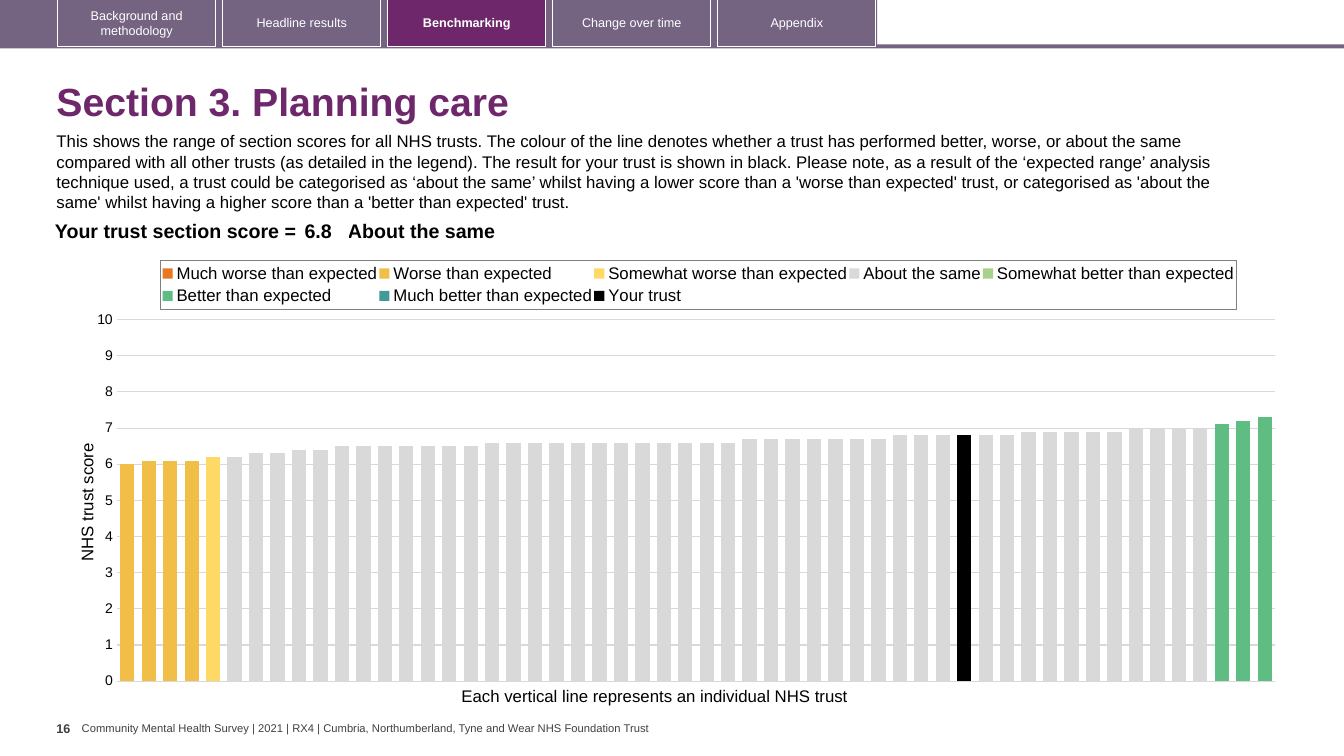
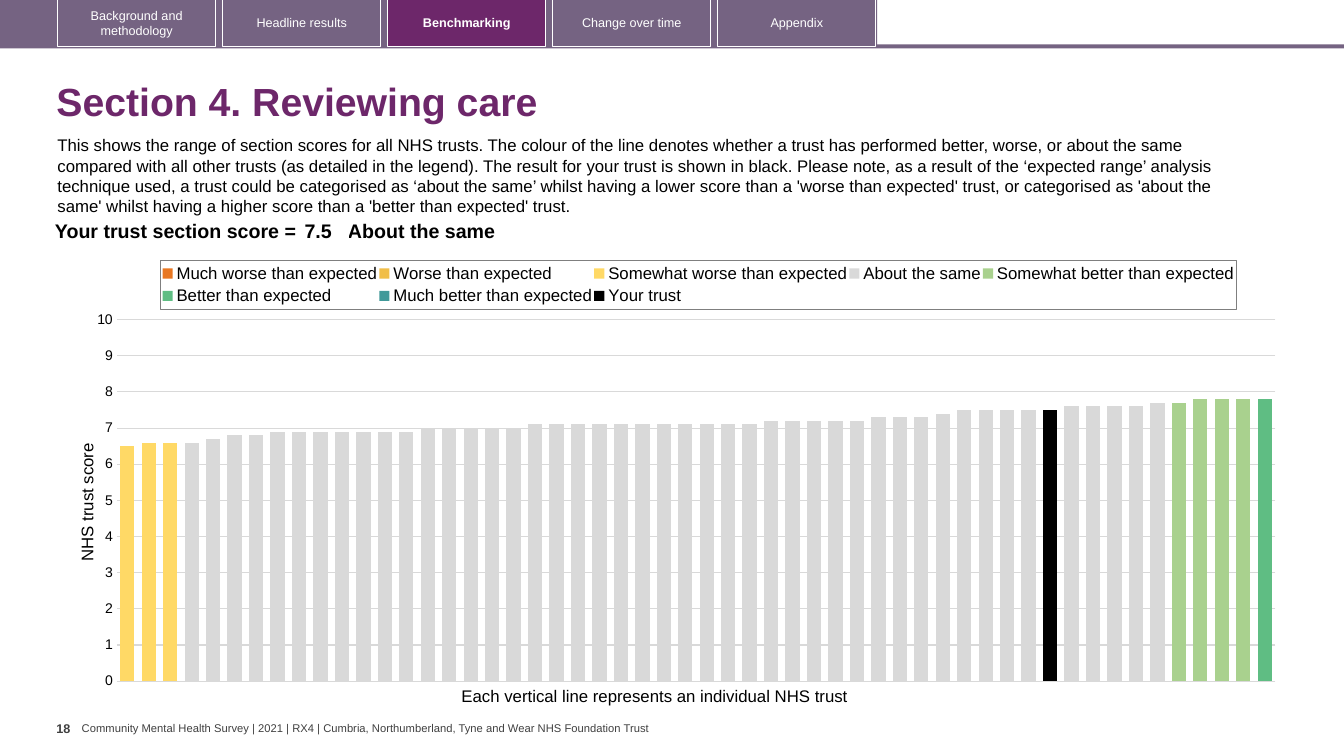
from copy import deepcopy
from dataclasses import dataclass

from lxml.etree import SubElement
from pptx import Presentation
from pptx.chart.axis import ValueAxis
from pptx.chart.chart import Chart
from pptx.chart.data import CategoryChartData
from pptx.chart.legend import Legend
from pptx.dml.color import RGBColor
from pptx.enum.chart import XL_CHART_TYPE, XL_LEGEND_POSITION, XL_TICK_LABEL_POSITION, XL_TICK_MARK
from pptx.enum.shapes import MSO_SHAPE
from pptx.enum.text import MSO_ANCHOR, MSO_AUTO_SIZE, PP_ALIGN
from pptx.oxml import parse_xml
from pptx.oxml.ns import nsdecls, qn
from pptx.shapes.autoshape import Shape
from pptx.slide import Slide, SlideLayout
from pptx.text.text import Font, TextFrame
from pptx.util import Emu, Inches, Pt

SLIDE_WIDTH, SLIDE_HEIGHT = Inches(13.33), Inches(7.5)
PURPLE, MAUVE, WHITE, BLACK = "6D276A", "756382", "FFFFFF", "000000"
DARK_GREY, BORDER_GREY, GRID_GREY = "404040", "7F7F7F", "D9D9D9"
FONT = "Arial"

TABS = ["Background and methodology", "Headline results", "Benchmarking",
        "Change over time", "Appendix"]
ACTIVE_TAB = "Benchmarking"
FOOTER = ("Community Mental Health Survey | 2021 | RX4 | "
          "Cumbria, Northumberland, Tyne and Wear NHS Foundation Trust")
INTRO = (
    "This shows the range of section scores for all NHS trusts. The colour of the line denotes "
    "whether a trust has performed better, worse, or about the same compared with all other trusts "
    "(as detailed in the legend). The result for your trust is shown in black. Please note, as a "
    "result of the ‘expected range’ analysis technique used, a trust could be categorised as "
    "‘about the same’ whilst having a lower score than a 'worse than expected' trust, or "
    "categorised as 'about the same' whilst having a higher score than a 'better than expected' "
    "trust."
)
BANDS = {
    "Much worse than expected": "E87722",
    "Worse than expected": "F1BE48",
    "Somewhat worse than expected": "FFD966",
    "About the same": "D9D9D9",
    "Somewhat better than expected": "A9D18E",
    "Better than expected": "5FBD83",
    "Much better than expected": "419999",
}
OWN_TRUST = "Your trust"
TRUST_COUNT = 54


@dataclass(frozen=True)
class Frame:
    """A box in percent of the slide's width and height."""
    left: float
    top: float
    width: float
    height: float

    def emu(self) -> tuple[Emu, Emu, Emu, Emu]:
        return (across(self.left), down(self.top), across(self.width), down(self.height))


@dataclass(frozen=True)
class Section:
    """Scores rise from band to band; each is given as (score, number of trusts)."""
    title: str
    number: int
    intro: Frame
    scores: dict[str, list[tuple[float, int]]]
    own_position: int
    own_score: float
    verdict: str = "About the same"


SECTIONS = [
    Section(
        "Section 3. Planning care", 16, Frame(3.45, 16.67, 91, 12.13),
        {
            "Worse than expected": [(6, 1), (6.1, 3)],
            "Somewhat worse than expected": [(6.2, 1)],
            "About the same": [(6.2, 1), (6.3, 2), (6.4, 2), (6.5, 7), (6.6, 12), (6.7, 7),
                               (6.8, 6), (6.9, 5), (7, 4)],
            "Better than expected": [(7.1, 1), (7.2, 1), (7.3, 1)],
        },
        own_position=39, own_score=6.8,
    ),
    Section(
        "Section 4. Reviewing care", 18, Frame(3.52, 17.2, 91, 12.13),
        {
            "Somewhat worse than expected": [(6.5, 1), (6.6, 2)],
            "About the same": [(6.6, 1), (6.7, 1), (6.8, 2), (6.9, 7), (7, 5), (7.1, 11),
                               (7.2, 5), (7.3, 3), (7.4, 1), (7.5, 5), (7.6, 4), (7.7, 1)],
            "Somewhat better than expected": [(7.7, 1), (7.8, 3)],
            "Better than expected": [(7.8, 1)],
        },
        own_position=43, own_score=7.5,
    ),
]


def across(percent: float) -> Emu:
    return Emu(round(SLIDE_WIDTH * percent / 100))


def down(percent: float) -> Emu:
    return Emu(round(SLIDE_HEIGHT * percent / 100))


def color(value: str) -> RGBColor:
    return RGBColor.from_string(value)


def style_font(font: Font, size: float, hue: str = BLACK, bold: bool = False) -> None:
    font.name, font.size, font.bold = FONT, Pt(size), bold
    font.color.rgb = color(hue)


def set_text(frame: TextFrame, text: str, size: float, hue: str = BLACK, bold: bool = False,
             align: PP_ALIGN = PP_ALIGN.LEFT) -> None:
    frame.text = text
    para = frame.paragraphs[0]
    para.alignment = align
    style_font(para.runs[0].font, size, hue, bold)


def add_label(page: Slide, frame: Frame, text: str, size: float, hue: str = BLACK,
              bold: bool = False, inset: float = 0) -> Shape:
    """Add a text box on one line, with a side inset in inches."""
    box = page.shapes.add_textbox(*frame.emu())
    box.text_frame.word_wrap = False
    box.text_frame.margin_left = box.text_frame.margin_right = Inches(inset)
    set_text(box.text_frame, text, size, hue, bold)
    return box


def add_block(page: Slide, frame: Frame, fill: str | None, line: str | None = None) -> Shape:
    block = page.shapes.add_shape(MSO_SHAPE.RECTANGLE, *frame.emu())
    block.shadow.inherit = False
    if fill:
        block.fill.solid()
        block.fill.fore_color.rgb = color(fill)
    else:
        block.fill.background()
    if line:
        block.line.color.rgb = color(line)
        block.line.width = Pt(0.75)
    else:
        block.line.fill.background()
    return block


def furnish_layout(layout: SlideLayout, page: Slide) -> None:
    """Draw the navigation and footer on a page, then move them to its layout."""
    footer = add_label(page, Frame(6.08, 95.47, 42.84, 1.73), FOOTER, 8, DARK_GREY)
    footer.text_frame.margin_top = footer.text_frame.margin_bottom = 0
    footer.text_frame.vertical_anchor = MSO_ANCHOR.MIDDLE
    furniture = [footer,
                 add_block(page, Frame(0, 5.87, 100, 0.53), MAUVE),
                 add_block(page, Frame(0, 0, 65.27, 6.27), MAUVE)]
    for column, name in enumerate(TABS):
        active = name == ACTIVE_TAB
        tab = add_block(page, Frame(4.28 + 12.28 * column, -0.13, 11.78, 6.27),
                        PURPLE if active else None, WHITE)
        tab.text_frame.vertical_anchor = MSO_ANCHOR.MIDDLE
        set_text(tab.text_frame, name, 9, WHITE, active, PP_ALIGN.CENTER)
        furniture.append(tab)
    for identifier, shape in enumerate(furniture, start=100):
        shape.element.xpath(".//p:cNvPr")[0].set("id", str(identifier))
        layout.shapes.element.append(shape.element)


def fill_placeholder(holder: Shape, frame: Frame, text: str, size: float, hue: str,
                     bold: bool, spacing: float, anchor: MSO_ANCHOR) -> None:
    holder.left, holder.top, holder.width, holder.height = frame.emu()
    holder.text_frame.auto_size = MSO_AUTO_SIZE.NONE
    holder.text_frame.vertical_anchor = anchor
    holder.text_frame.text = text
    para = holder.text_frame.paragraphs[0]
    para.alignment, para.line_spacing, para.space_before = PP_ALIGN.LEFT, spacing, Pt(0)
    properties = para._p.get_or_add_pPr()
    properties.set("marL", "0")
    properties.set("indent", "0")
    SubElement(properties, qn("a:buNone"))
    style_font(para.runs[0].font, size, hue, bold)


def build_chart_data(section: Section) -> CategoryChartData:
    data = CategoryChartData()
    data.categories = [str(number + 1) for number in range(TRUST_COUNT)]
    start = 0
    for band in BANDS:
        scores = [score for score, count in section.scores.get(band, []) for _ in range(count)]
        rest = TRUST_COUNT - start - len(scores)
        data.add_series(band, [None] * start + scores + [None] * rest)
        start += len(scores)
    own = [section.own_score if position == section.own_position else None
           for position in range(TRUST_COUNT)]
    data.add_series(OWN_TRUST, own)
    return data


def set_layout(parent, index: int, inner: bool = False, **shares: float) -> None:
    """Place a chart part by shares of the chart's size: x, y, w and h."""
    for old in parent.findall(qn("c:layout")):
        parent.remove(old)
    layout = parent.makeelement(qn("c:layout"))
    parent.insert(index, layout)
    manual = SubElement(layout, qn("c:manualLayout"))
    if inner:
        SubElement(manual, qn("c:layoutTarget")).set("val", "inner")
    for axis in "xy":
        SubElement(manual, qn(f"c:{axis}Mode")).set("val", "edge")
    for side, share in shares.items():
        SubElement(manual, qn(f"c:{side}")).set("val", str(share))


def move_last_series_to_second_axes(chart: Chart) -> None:
    plot_area = chart.element.find(f".//{qn('c:plotArea')}")
    bars = plot_area.find(qn("c:barChart"))
    own_bars = deepcopy(bars)
    bars.remove(bars.findall(qn("c:ser"))[-1])
    for series in own_bars.findall(qn("c:ser"))[:-1]:
        own_bars.remove(series)
    bars.addnext(own_bars)

    category, value = (plot_area.find(qn(name)) for name in ("c:catAx", "c:valAx"))
    own_category, own_value = deepcopy(category), deepcopy(value)
    value.addnext(own_value)
    own_value.addnext(own_category)
    for name in ("c:majorGridlines", "c:title"):
        own_value.remove(own_value.find(qn(name)))
    own_value.find(qn("c:axPos")).set("val", "r")
    own_value.find(qn("c:tickLblPos")).set("val", "none")
    own_value.find(qn("c:crosses")).set("val", "max")
    new_ids = {axis.find(qn("c:axId")).get("val"): identifier
               for axis, identifier in ((category, "5001"), (value, "5002"))}
    for part in (own_bars, own_category, own_value):
        for reference in part.findall(qn("c:axId")) + part.findall(qn("c:crossAx")):
            reference.set("val", new_ids[reference.get("val")])


def style_value_axis(axis: ValueAxis) -> None:
    axis.minimum_scale, axis.maximum_scale, axis.major_unit = 0, 10, 1
    axis.major_tick_mark = axis.minor_tick_mark = XL_TICK_MARK.NONE
    axis.tick_label_position = XL_TICK_LABEL_POSITION.NEXT_TO_AXIS
    axis.format.line.fill.background()
    axis.major_gridlines.format.line.color.rgb = color(GRID_GREY)
    axis.major_gridlines.format.line.width = Pt(0.75)
    style_font(axis.tick_labels.font, 10)
    title = axis.axis_title
    set_text(title.text_frame, "NHS trust score", 12, align=PP_ALIGN.CENTER)
    title.element.xpath(".//a:bodyPr")[0].set("rot", "-5400000")
    set_layout(title.element, 1, x=0.005, y=0.427)


def style_legend(legend: Legend) -> None:
    legend.position = XL_LEGEND_POSITION.TOP
    legend.include_in_layout = False
    style_font(legend.font, 12)
    element = legend.font and legend._element
    set_layout(element, 1, x=0.076, y=0.025, w=0.878, h=0.11)
    border = parse_xml(f'<c:spPr {nsdecls("c", "a")}><a:ln w="9525"><a:solidFill>'
                       f'<a:srgbClr val="{BORDER_GREY}"/></a:solidFill></a:ln></c:spPr>')
    element.find(qn("c:txPr")).addprevious(border)


def add_score_chart(page: Slide, section: Section) -> None:
    frame = Frame(5.03, 32.93, 91.15, 59.2)
    chart = page.shapes.add_chart(XL_CHART_TYPE.COLUMN_CLUSTERED, *frame.emu(),
                                  build_chart_data(section)).chart
    style_font(chart.font, 10)
    chart.has_title = False
    chart.has_legend = True
    style_legend(chart.legend)
    plot = chart.plots[0]
    plot.gap_width, plot.overlap, plot.vary_by_categories = 50, 100, False
    for series, hue in zip(plot.series, [*BANDS.values(), BLACK]):
        series.invert_if_negative = False
        series.format.fill.solid()
        series.format.fill.fore_color.rgb = color(hue)
    chart.category_axis.visible = False
    style_value_axis(chart.value_axis)
    move_last_series_to_second_axes(chart)
    set_layout(chart.element.find(f".//{qn('c:plotArea')}"), 0, inner=True,
               x=0.04, y=0.158, w=0.946, h=0.808)


def add_score_table(page: Slide, section: Section) -> None:
    frame = Frame(2.63, 28.67, 87.7, 4.13)
    table = page.shapes.add_table(1, 3, *frame.emu()).table
    table.first_row = table.horz_banding = False
    columns = [("Your trust section score =", 19.73, PP_ALIGN.RIGHT, 0.04),
               (str(section.own_score), 3.53, PP_ALIGN.LEFT, 0.04),
               (section.verdict, 64.44, PP_ALIGN.LEFT, 0)]
    for index, (text, width, align, inset) in enumerate(columns):
        table.columns[index].width = across(width)
        cell = table.cell(0, index)
        cell.fill.background()
        cell.margin_left = cell.margin_right = Inches(inset)
        cell.margin_top = cell.margin_bottom = Inches(0.04)
        set_text(cell.text_frame, text, 14, bold=True, align=align)


def fill_page(page: Slide, section: Section) -> None:
    fill_placeholder(page.shapes.title, Frame(3.45, 8.93, 93.7, 9.6), section.title,
                     28, PURPLE, True, 0.9, MSO_ANCHOR.MIDDLE)
    fill_placeholder(page.placeholders[1], section.intro, INTRO,
                     12, BLACK, False, 1, MSO_ANCHOR.TOP)
    add_label(page, Frame(4.2, 94.67, 1.88, 5.33), str(section.number), 9, DARK_GREY, True)
    add_label(page, Frame(33.6, 90, 30.83, 4),
              "Each vertical line represents an individual NHS trust", 12, inset=0.1)
    add_score_chart(page, section)
    add_score_table(page, section)


def main() -> None:
    deck = Presentation()
    deck.slide_width, deck.slide_height = SLIDE_WIDTH, SLIDE_HEIGHT
    layout = deck.slide_layouts[1]
    pages = [deck.slides.add_slide(layout) for _ in SECTIONS]
    furnish_layout(layout, pages[0])
    for page, section in zip(pages, SECTIONS):
        fill_page(page, section)
    deck.save("out.pptx")


if __name__ == "__main__":
    main()
